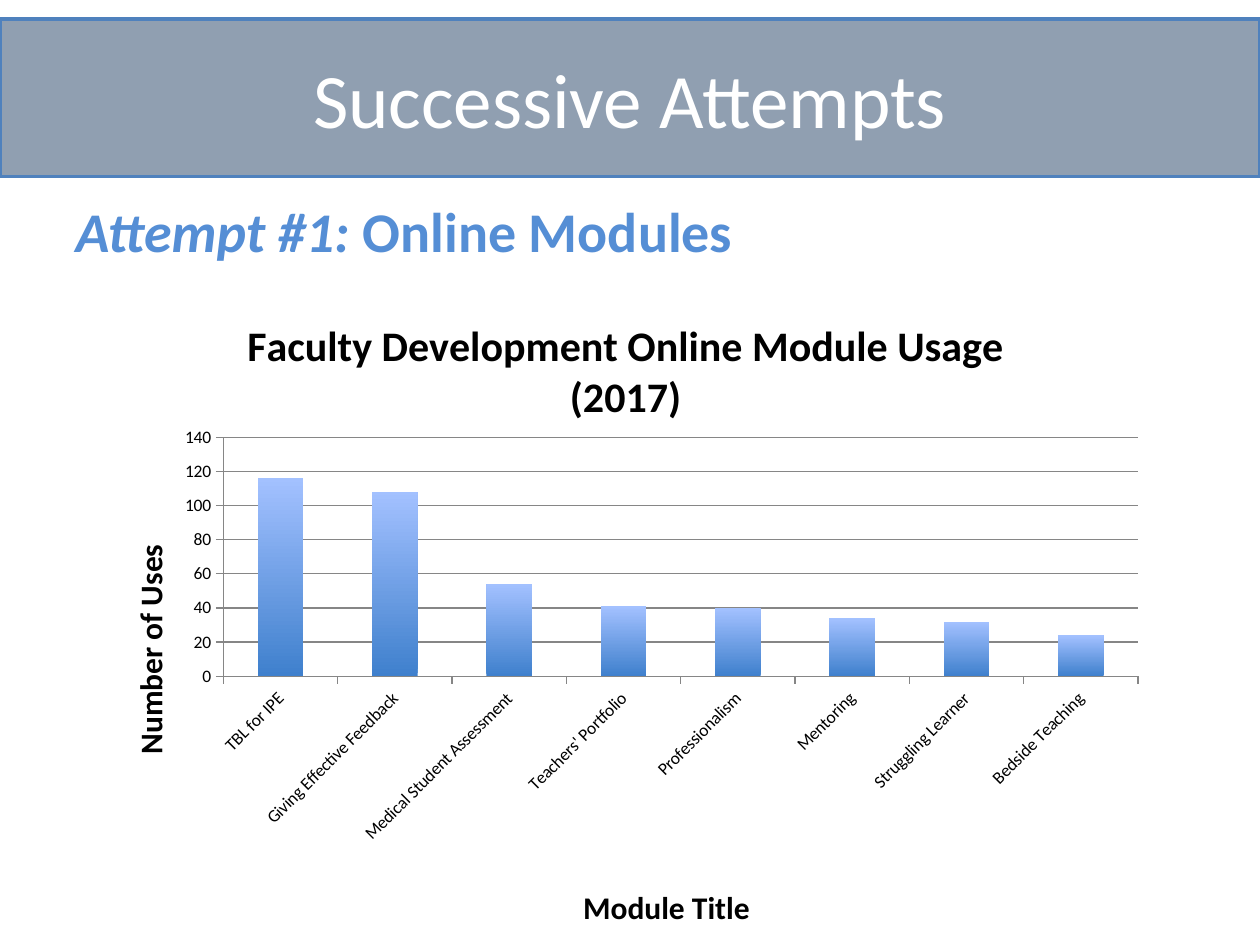
from dataclasses import dataclass

from lxml.etree import SubElement
from pptx import Presentation
from pptx.chart.data import CategoryChartData
from pptx.dml.color import RGBColor
from pptx.enum.chart import XL_CHART_TYPE, XL_TICK_MARK
from pptx.enum.text import MSO_ANCHOR, PP_ALIGN
from pptx.oxml import parse_xml
from pptx.oxml.ns import nsdecls, qn
from pptx.util import Inches, Pt

FONT = "Calibri"


@dataclass
class ModuleUsage:
    """Uses of one online module."""

    title: str
    uses: int


@dataclass
class AxisStyle:
    """Title of an axis and its place as fractions of the chart."""

    title: str
    left: float
    top: float


MODULES = [
    ModuleUsage("TBL for IPE", 116),
    ModuleUsage("Giving Effective Feedback", 108),
    ModuleUsage("Medical Student Assessment", 54),
    ModuleUsage("Teachers' Portfolio", 41),
    ModuleUsage("Professionalism", 40),
    ModuleUsage("Mentoring", 34),
    ModuleUsage("Struggling Learner", 32),
    ModuleUsage("Bedside Teaching", 24),
]
CATEGORY_STYLE = AxisStyle("Module Title", 0.455, 0.9)
VALUE_STYLE = AxisStyle("Number of Uses", 0.03, 0.38)


def set_color(target, color: str) -> None:
    """Give a font, fill or gradient stop its colour."""
    target.rgb = RGBColor.from_string(color)


def style_font(font, size: float, color: str, bold: bool = False, italic: bool = False) -> None:
    """Format a font."""
    font.name, font.size, font.bold, font.italic = FONT, Pt(size), bold, italic
    set_color(font.color, color)


def move(box, left: float, top: float, width: float, height: float) -> None:
    """Place a shape, in inches."""
    box.left, box.top = Inches(left), Inches(top)
    box.width, box.height = Inches(width), Inches(height)


def set_layout(element, **settings) -> None:
    """Give a chart part a manual layout."""
    layout = element.find(qn("c:layout"))
    if layout is None:
        layout = parse_xml(f"<c:layout {nsdecls('c')}/>")
        element.insert(0, layout)
    manual = SubElement(layout, qn("c:manualLayout"))
    for name, value in settings.items():
        SubElement(manual, qn(f"c:{name}")).set("val", str(value))


def style_title(title, text: str, size: float) -> None:
    """Write a chart or axis title."""
    title.text_frame.text = text
    style_font(title.text_frame.paragraphs[0].runs[0].font, size, "000000", bold=True)


def style_axis(axis, style: AxisStyle) -> None:
    """Format an axis with its title, ticks and line."""
    style_title(axis.axis_title, style.title, 18)
    set_layout(axis.axis_title._element, xMode="edge", yMode="edge", x=style.left, y=style.top)
    axis.major_tick_mark = XL_TICK_MARK.OUTSIDE
    axis.minor_tick_mark = XL_TICK_MARK.NONE
    style_font(axis.tick_labels.font, 10, "000000")
    style_line(axis.format.line)


def style_line(line) -> None:
    """Format an axis line or gridline."""
    line.width = Pt(0.75)
    line.fill.solid()
    set_color(line.fill.fore_color, "868686")


def add_banner(title) -> None:
    """Fill in the title banner."""
    move(title, 0, 0.15, 10, 1.25)
    title.fill.solid()
    set_color(title.fill.fore_color, "17375E")
    color = title._element.spPr.find(qn("a:solidFill"))[0]
    SubElement(color, qn("a:alpha")).set("val", "48000")
    title.line.width = Pt(2)
    title.line.fill.solid()
    set_color(title.line.fill.fore_color, "4F81BD")
    title.text_frame.text = "Successive Attempts"
    title.text_frame.vertical_anchor = MSO_ANCHOR.MIDDLE
    para = title.text_frame.paragraphs[0]
    para.alignment = PP_ALIGN.CENTER
    style_font(para.runs[0].font, 44, "FFFFFF")


def add_heading(body) -> None:
    """Fill in the heading in the body."""
    move(body, 0.5, 1.51, 9, 4.95)
    para = body.text_frame.paragraphs[0]
    for text, italic in (("Attempt #1:", True), (" Online Modules", False)):
        span = para.add_run()
        span.text = text
        style_font(span.font, 32, "558ED5", bold=True, italic=italic)
    properties = para._p.get_or_add_pPr()
    properties.set("marL", "0")
    properties.set("indent", "0")
    SubElement(properties, qn("a:buNone"))


def add_usage_chart(page) -> None:
    """Draw the module usage columns."""
    data = CategoryChartData()
    data.categories = [module.title for module in MODULES]
    data.add_series("Series 1", [module.uses for module in MODULES])
    chart = page.shapes.add_chart(
        XL_CHART_TYPE.COLUMN_CLUSTERED, Inches(0.72), Inches(2.3), Inches(8.49), Inches(5.2), data
    ).chart
    style_font(chart.font, 10, "000000")
    chart.has_legend = False
    style_title(chart.chart_title, "Faculty Development Online Module Usage (2017)", 24)
    style_axis(chart.category_axis, CATEGORY_STYLE)
    style_axis(chart.value_axis, VALUE_STYLE)
    label_body = chart.category_axis._element.find(qn("c:txPr")).find(qn("a:bodyPr"))
    label_body.set("rot", "-2700000")
    label_body.set("vert", "horz")
    scale = chart.value_axis
    scale.minimum_scale, scale.maximum_scale, scale.major_unit = 0, 140, 20
    scale.has_major_gridlines = True
    style_line(scale.major_gridlines.format.line)
    plot = chart.plots[0]
    plot.gap_width, plot.vary_by_categories = 150, False
    fill = plot.series[0].format.fill
    fill.gradient()
    fill.gradient_angle = 90
    for stop, color in zip(fill.gradient_stops, ("3F80CD", "A3C1FF")):
        set_color(stop.color, color)
    for stop, position in zip(fill.gradient_stops, (0, 1)):
        stop.position = position
    set_layout(
        chart._chartSpace.chart.plotArea,
        layoutTarget="inner", xMode="edge", yMode="edge", x=0.124, y=0.225, w=0.855, h=0.365,
    )


def main() -> None:
    """Build the slide and save it."""
    deck = Presentation()
    deck.slide_width, deck.slide_height = Inches(10), Inches(7.5)
    page = deck.slides.add_slide(deck.slide_layouts[1])
    add_banner(page.shapes.title)
    add_heading(page.placeholders[1])
    add_usage_chart(page)
    deck.save("out.pptx")


if __name__ == "__main__":
    main()
